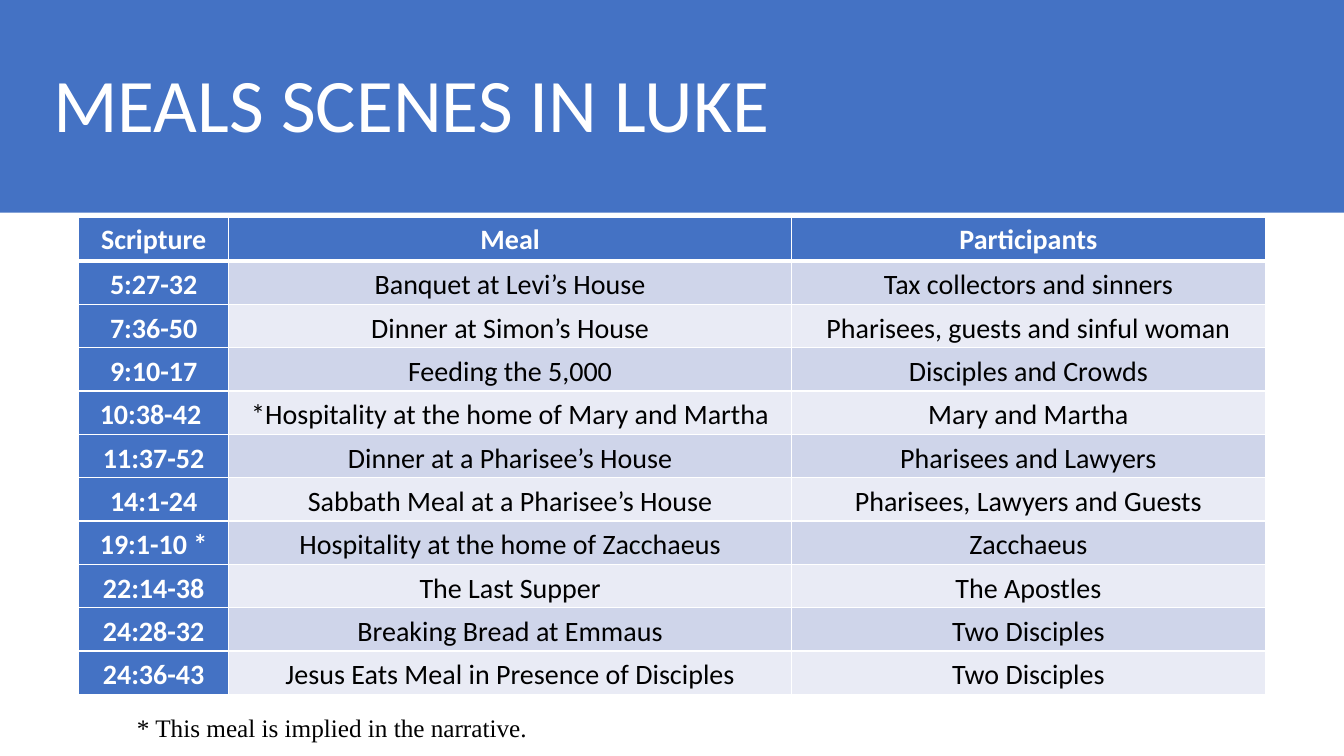
from lxml import etree
from pptx import Presentation
from pptx.dml.color import RGBColor
from pptx.enum.shapes import MSO_SHAPE
from pptx.enum.text import MSO_ANCHOR, PP_ALIGN
from pptx.oxml.ns import qn
from pptx.util import Inches, Pt

RECTANGLE = MSO_SHAPE.RECTANGLE
TOP = MSO_ANCHOR.TOP
MIDDLE = MSO_ANCHOR.MIDDLE
LEFT = PP_ALIGN.LEFT
CENTER = PP_ALIGN.CENTER

BLUE = RGBColor(0x44, 0x72, 0xC4)
DARK_BAND = RGBColor(0xCF, 0xD5, 0xEA)
LIGHT_BAND = RGBColor(0xE9, 0xEB, 0xF5)
WHITE = RGBColor(0xFF, 0xFF, 0xFF)
BLACK = RGBColor(0, 0, 0)

COLUMN_WIDTHS = [1.49, 5.58, 4.7]
ROW_HEIGHT = 0.43
MEALS = [
    ("Scripture", "Meal", "Participants"),
    ("5:27-32", "Banquet at Levi’s House", "Tax collectors and sinners"),
    ("7:36-50", "Dinner at Simon’s House", "Pharisees, guests and sinful woman"),
    ("9:10-17", "Feeding the 5,000", "Disciples and Crowds"),
    ("10:38-42 ", "*Hospitality at the home of Mary and Martha", "Mary and Martha"),
    ("11:37-52", "Dinner at a Pharisee’s House", "Pharisees and Lawyers"),
    ("14:1-24", "Sabbath Meal at a Pharisee’s House", "Pharisees, Lawyers and Guests"),
    ("19:1-10 *", "Hospitality at the home of Zacchaeus", "Zacchaeus"),
    ("22:14-38", "The Last Supper", "The Apostles"),
    ("24:28-32", "Breaking Bread at Emmaus", "Two Disciples"),
    ("24:36-43", "Jesus Eats Meal in Presence of Disciples", "Two Disciples"),
]


def write_text(frame, text, size, font, color, bold=False, align=LEFT,
               line_spacing=1.15, space_after=10):
    para = frame.paragraphs[0]
    para.alignment = align
    para.line_spacing = line_spacing
    para.space_after = Pt(space_after)
    span = para.add_run()
    span.text = text
    span.font.size = Pt(size)
    span.font.name = font
    span.font.bold = bold
    span.font.color.rgb = color


def add_banner(page):
    banner = page.shapes.add_shape(
        RECTANGLE, Inches(0), Inches(-0.01), Inches(13.33), Inches(2.12))
    banner.shadow.inherit = False
    banner.fill.solid()
    banner.fill.fore_color.rgb = BLUE
    banner.line.fill.background()


def add_text(page, left, top, width, height, anchor, text, size, font, color, **spacing):
    box = page.shapes.add_textbox(
        Inches(left), Inches(top), Inches(width), Inches(height))
    frame = box.text_frame
    frame.word_wrap = True
    frame.vertical_anchor = anchor
    write_text(frame, text, size, font, color, **spacing)


def set_borders(cell, top, bottom):
    properties = cell._tc.get_or_add_tcPr()
    for tag, width in (("a:lnL", 1), ("a:lnR", 1), ("a:lnT", top), ("a:lnB", bottom)):
        line = etree.SubElement(properties, qn(tag), w=str(Pt(width)))
        fill = etree.SubElement(line, qn("a:solidFill"))
        etree.SubElement(fill, qn("a:srgbClr"), val=str(WHITE))


def fill_cell(cell, row, column, text):
    header = row == 0
    strong = header or column == 0
    band = DARK_BAND if row % 2 else LIGHT_BAND
    cell.margin_left = cell.margin_right = Inches(0)
    cell.margin_top = cell.margin_bottom = Inches(0)
    cell.vertical_anchor = TOP if header else MIDDLE
    set_borders(cell, 3 if row == 1 else 1, 3 if header else 1)
    cell.fill.solid()
    cell.fill.fore_color.rgb = BLUE if strong else band
    write_text(cell.text_frame, text, 20, "Calibri",
               WHITE if strong else BLACK, bold=strong, align=CENTER)


def add_meal_table(page):
    table = page.shapes.add_table(
        len(MEALS), len(COLUMN_WIDTHS), Inches(0.78), Inches(2.16),
        Inches(sum(COLUMN_WIDTHS)), Inches(ROW_HEIGHT * len(MEALS))).table
    table.first_col = True
    for column, width in enumerate(COLUMN_WIDTHS):
        table.columns[column].width = Inches(width)
    for row, meal in enumerate(MEALS):
        table.rows[row].height = Inches(ROW_HEIGHT)
        for column, text in enumerate(meal):
            fill_cell(table.cell(row, column), row, column, text)


def main():
    deck = Presentation()
    deck.slide_width = Inches(13.33)
    deck.slide_height = Inches(7.5)
    page = deck.slides.add_slide(deck.slide_layouts[6])
    add_banner(page)
    add_text(page, 0.43, 0.35, 12.48, 1.45, MIDDLE, "MEALS SCENES IN LUKE",
             54, "Calibri", WHITE, line_spacing=0.9, space_after=0)
    add_meal_table(page)
    add_text(page, 1.26, 6.97, 6.68, 0.43, TOP,
             "* This meal is implied in the narrative.",
             18, "Times New Roman", BLACK)
    deck.save("out.pptx")


if __name__ == "__main__":
    main()
